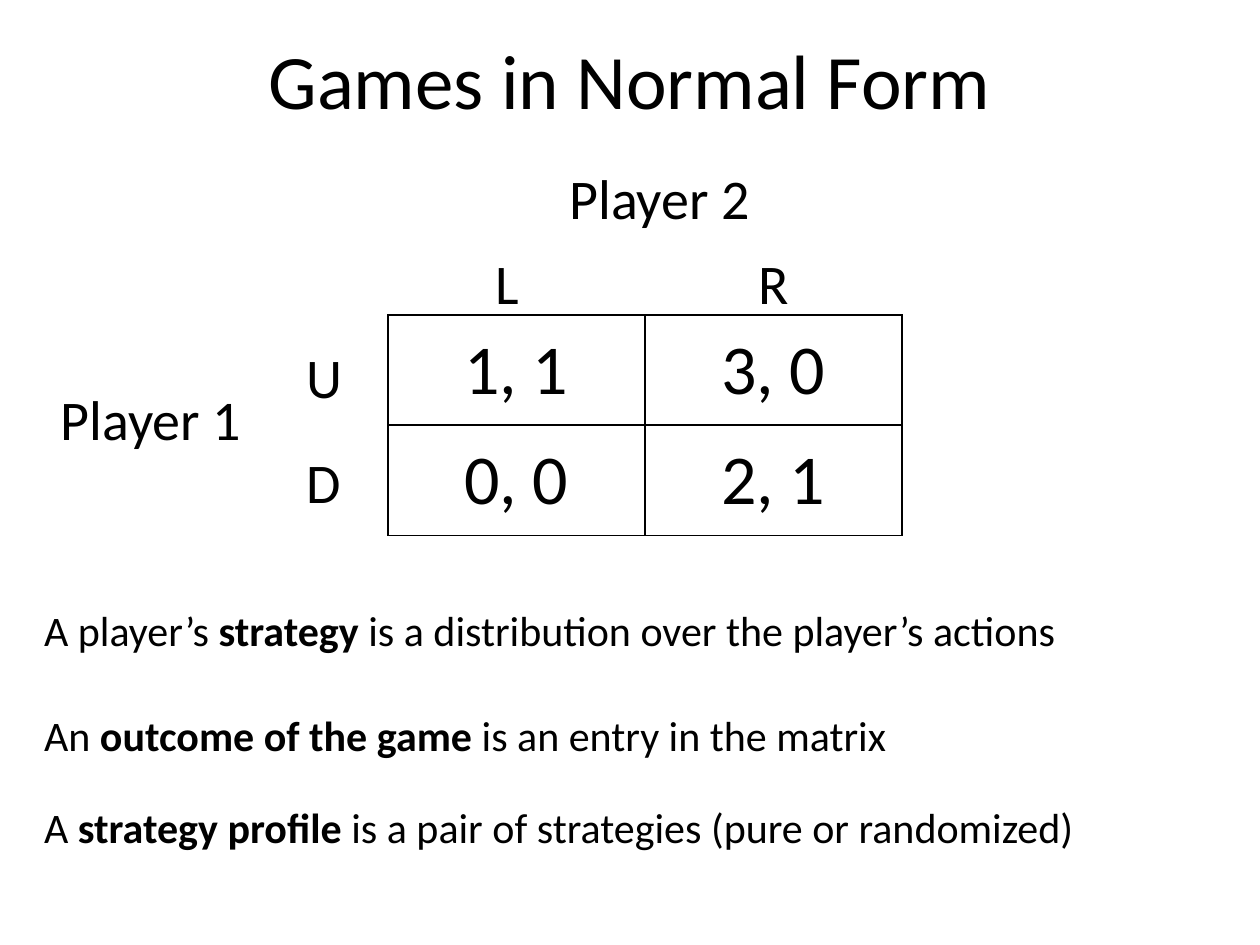
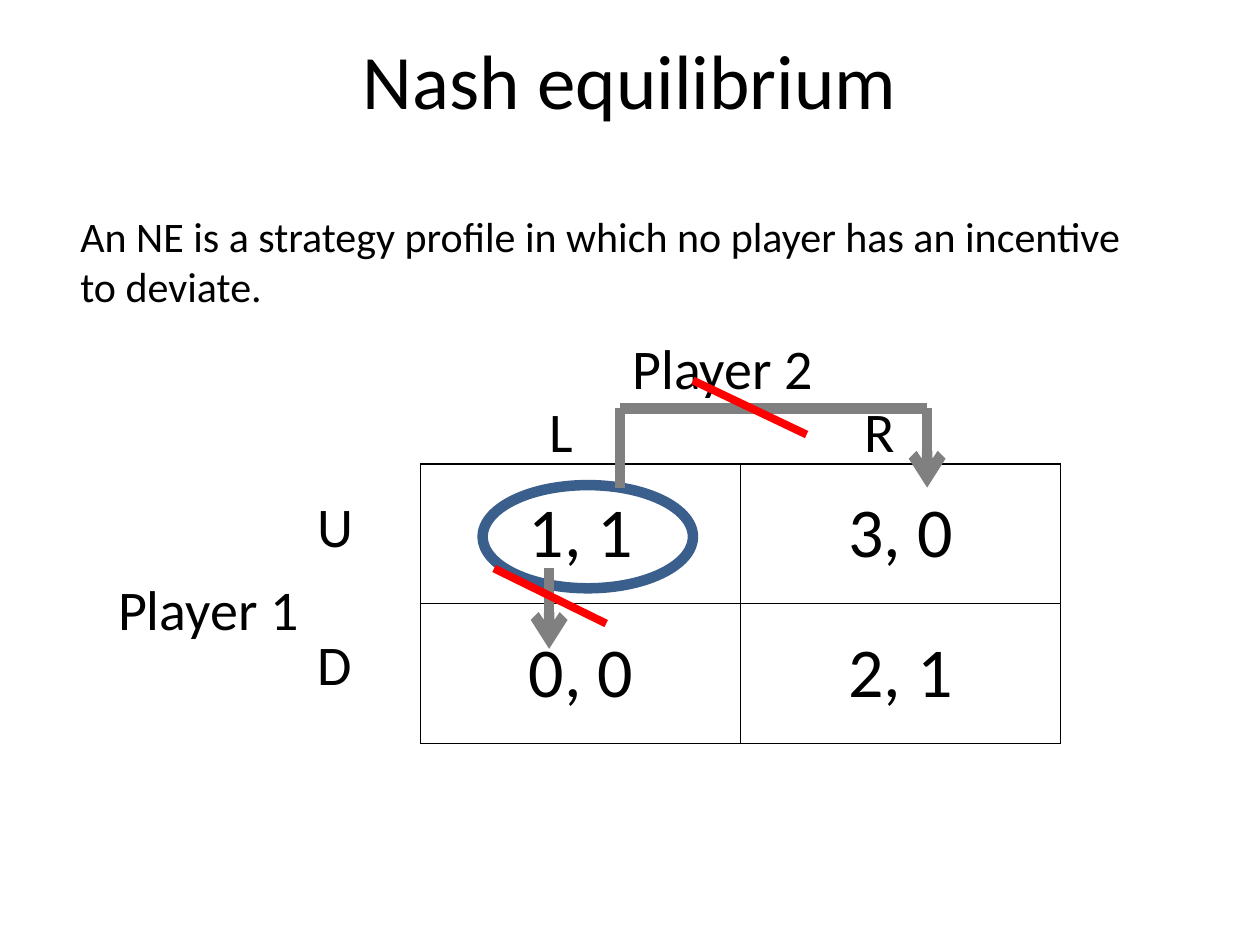
from dataclasses import dataclass
from itertools import pairwise

from lxml import etree
from pptx import Presentation
from pptx.dml.color import RGBColor
from pptx.enum import shapes as es, text as et
from pptx.oxml import ns
from pptx.util import Cm, Pt


@dataclass(frozen=True)
class Theme:
    font: str = "Calibri"
    ink: str = "000000"
    ring: str = "3A5F8C"
    move: str = "808080"
    strike: str = "FF0000"
    title: int = 44
    payoff: int = 40
    label: int = 32
    body: int = 24
    grid: int = 1
    thick: float = 6
    slash: float = 4.5


T = Theme()
PAYOFFS = (("1, 1", "3, 0"), ("0, 0", "2, 1"))
FRAME = {"word_wrap": True, "auto_size": et.MSO_AUTO_SIZE.SHAPE_TO_FIT_TEXT}


def apply(obj, form):
    for name, value in form.items():
        setattr(obj, name, value)


def sub(parent, tag, **attrs):
    return etree.SubElement(parent, ns.qn(tag), attrs)


def write(frame, parts, size, align=None):
    """Fill one paragraph; every second part is bold."""
    para = frame.paragraphs[0]
    para.alignment = align
    for i, part in enumerate(parts):
        run = para.add_run()
        run.text = part
        apply(run.font, {"name": T.font, "size": Pt(size), "bold": i % 2 == 1})
        run.font.color.rgb = RGBColor.from_string(T.ink)


def add_page(deck, title):
    slide = deck.slides.add_slide(deck.slide_layouts[5])
    head = slide.shapes.title
    apply(head, {"left": Cm(1.27), "top": Cm(0),
                 "width": Cm(22.86), "height": Cm(3.18)})
    head.text_frame.vertical_anchor = et.MSO_ANCHOR.MIDDLE
    write(head.text_frame, [title], T.title, et.PP_ALIGN.CENTER)
    return slide.shapes


def add_text(shapes, x, y, w, h, parts, size):
    frame = shapes.add_textbox(Cm(x), Cm(y), Cm(w), Cm(h)).text_frame
    apply(frame, FRAME)
    write(frame, parts, size)


def add_edges(cell):
    props = cell._tc.get_or_add_tcPr()
    for i, side in enumerate("LRTB"):
        edge = etree.Element(ns.qn(f"a:ln{side}"), w=str(Pt(T.grid)))
        sub(sub(edge, "a:solidFill"), "a:srgbClr", val=T.ink)
        props.insert(i, edge)


def add_matrix(shapes, x, y, w, h):
    """Draw the payoff table with cells of w by h."""
    table = shapes.add_table(2, 2, Cm(x), Cm(y), Cm(2 * w), Cm(2 * h)).table
    apply(table, {"first_row": False, "horz_banding": False})
    for col in table.columns:
        col.width = Cm(w)
    for row, pays in zip(table.rows, PAYOFFS):
        row.height = Cm(h)
        for cell, pay in zip(row.cells, pays):
            cell.fill.background()
            cell.vertical_anchor = et.MSO_ANCHOR.MIDDLE
            write(cell.text_frame, [pay], T.payoff, et.PP_ALIGN.CENTER)
            add_edges(cell)


def add_labels(shapes, one, two, rows, cols):
    """Name the players at one and two; rows is (x, ys), cols is (xs, y)."""
    for name, (x, y) in (("Player 1", one), ("Player 2", two)):
        add_text(shapes, x, y, 5.08, 1.63, [name], T.label)
    spots = [(rows[0], y) for y in rows[1]] + [(x, cols[1]) for x in cols[0]]
    for name, (x, y) in zip("UDLR", spots):
        add_text(shapes, x, y, 2.12, 1.63, [name], T.label)


def paint(line, color, width):
    line.color.rgb = RGBColor.from_string(color)
    line.width = Pt(width)


def add_line(shapes, start, end, color, width, arrow=False):
    ends = [Cm(v) for v in (*start, *end)]
    link = shapes.add_connector(es.MSO_CONNECTOR.STRAIGHT, *ends)
    paint(link.line, color, width)
    if arrow:
        sub(link.line._get_or_add_ln(), "a:tailEnd", type="arrow")
    sub(link._element.spPr, "a:effectLst")


def add_route(shapes, points):
    """Join the points with one grouped path that ends in an arrow."""
    group = shapes.add_group_shape().shapes
    for start, end in pairwise(points):
        add_line(group, start, end, T.move, T.thick, end == points[-1])


def add_ring(shapes, x, y, w, h):
    ring = shapes.add_shape(es.MSO_SHAPE.OVAL, Cm(x), Cm(y), Cm(w), Cm(h))
    ring.shadow.inherit = False
    ring.fill.background()
    paint(ring.line, T.ring, T.thick)


def build_form(deck):
    shapes = add_page(deck, "Games in Normal Form")
    add_matrix(shapes, 7.82, 6.35, 5.18, 2.22)
    add_labels(shapes, (0.97, 7.62), (11.23, 3.18),
               (5.92, (6.78, 8.89)), ((9.73, 15.04), 4.88))
    terms = (
        (12.07, "A player’s ", "strategy",
         " is a distribution over the player’s actions"),
        (14.17, "An ", "outcome of the game", " is an entry in the matrix"),
        (16.03, "A ", "strategy profile",
         " is a pair of strategies (pure or randomized)"),
    )
    for y, *parts in terms:
        add_text(shapes, 0.64, y, 24.13, 1.27, parts, T.body)


def build_nash(deck):
    shapes = add_page(deck, "Nash equilibrium")
    add_matrix(shapes, 8.48, 9.35, 6.45, 2.82)
    add_labels(shapes, (2.13, 11.46), (12.5, 6.6),
               (6.15, (9.78, 12.57)), ((10.82, 17.17), 7.87))
    rule = ("An NE is a strategy profile in which no player has "
            "an incentive to deviate.")
    add_text(shapes, 1.37, 4.11, 21.69, 2.31, [rule], T.body)
    add_ring(shapes, 9.73, 9.78, 4.24, 2.08)
    add_route(shapes, [(12.5, 9.83), (12.5, 8.23),
                       (18.69, 8.23), (18.69, 9.83)])
    add_line(shapes, (13.97, 7.67), (16.26, 8.76), T.strike, T.slash)
    add_line(shapes, (11.07, 11.46), (11.07, 13.08), T.move, T.thick, True)
    add_line(shapes, (9.96, 11.46), (12.22, 12.57), T.strike, T.slash)


def main():
    deck = Presentation()
    apply(deck, {"slide_width": Cm(25.4), "slide_height": Cm(19.05)})
    build_form(deck)
    build_nash(deck)
    deck.save("out.pptx")


if __name__ == "__main__":
    main()
